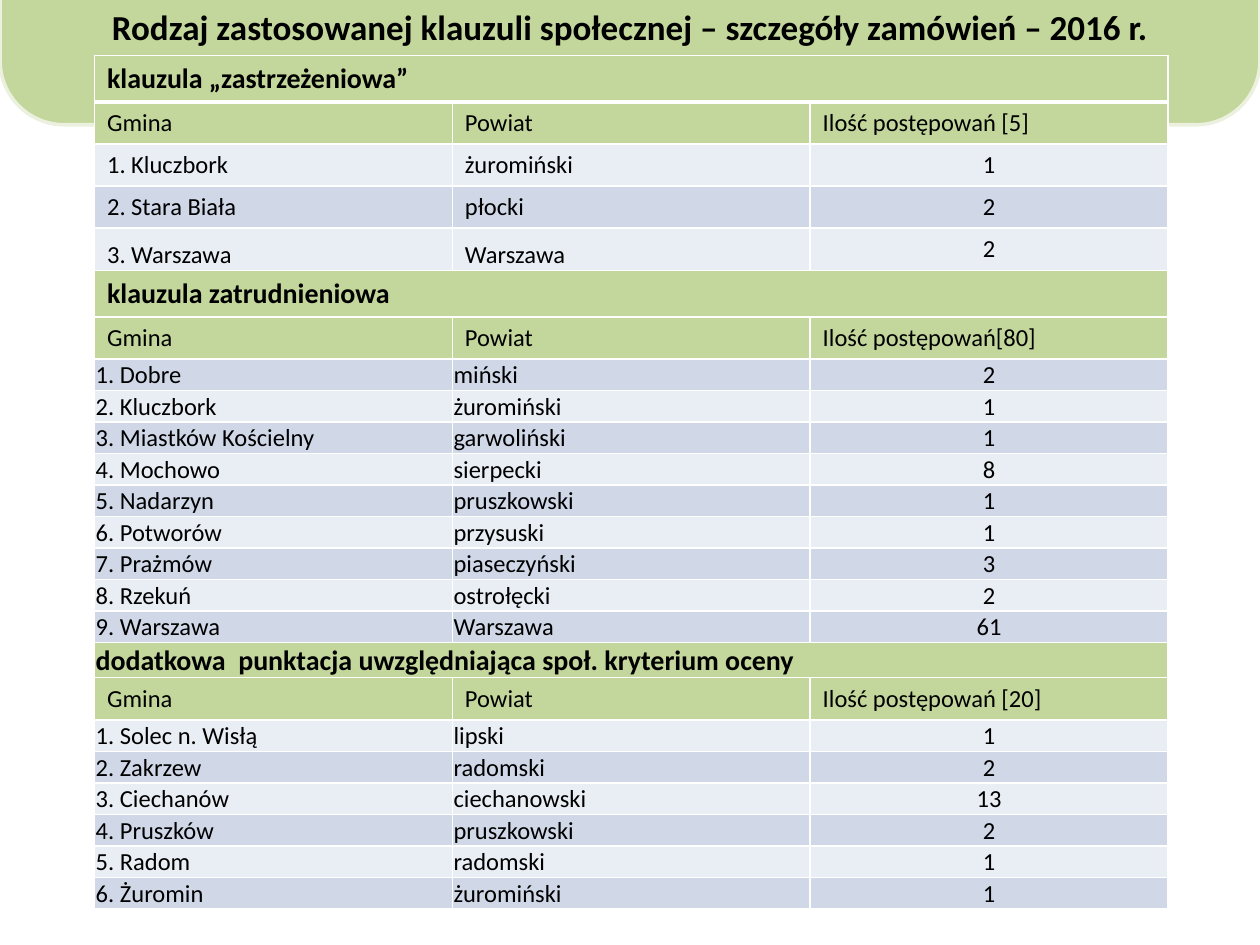
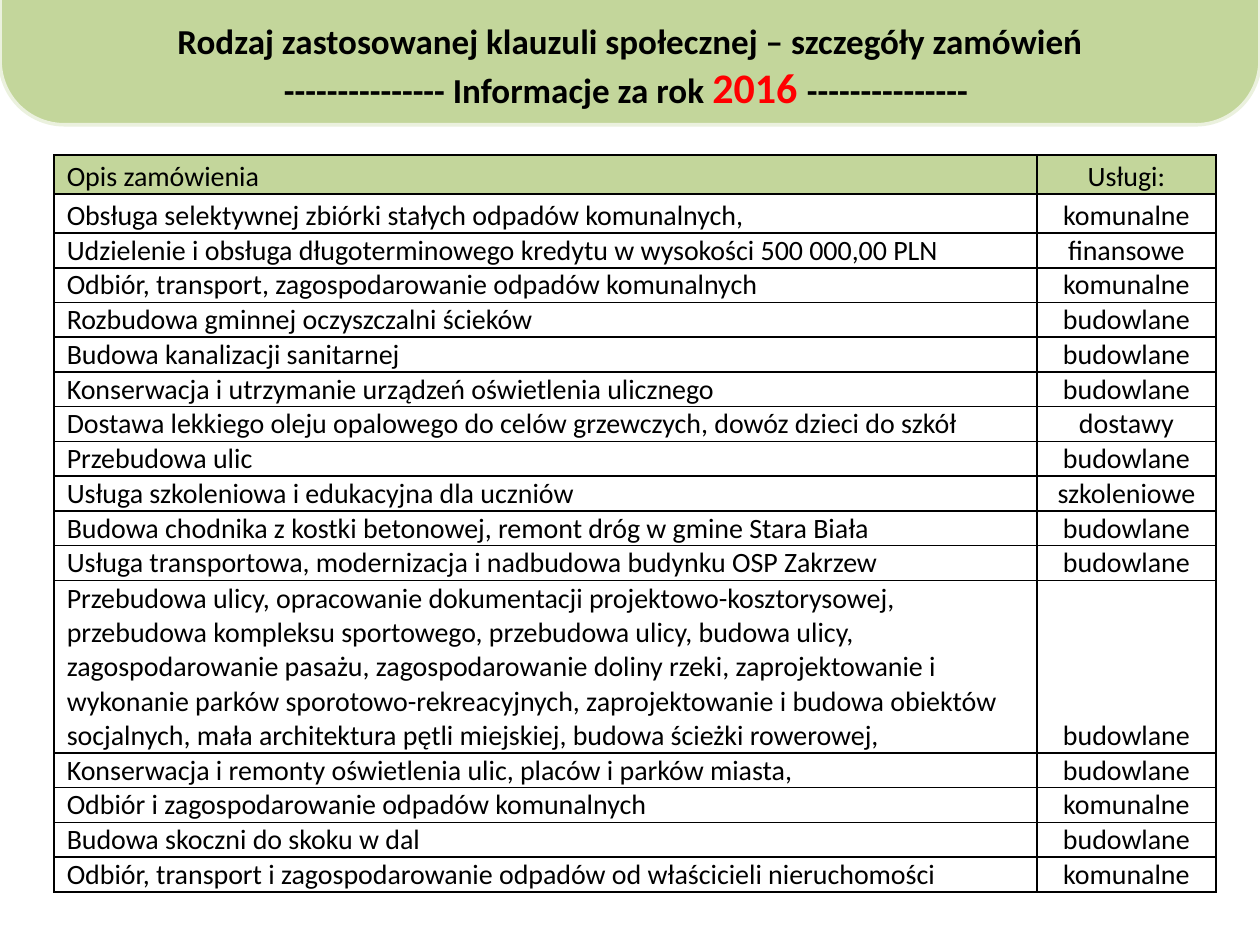
from lxml import etree
from pptx import Presentation
from pptx import util as u
from pptx.dml.color import RGBColor
from pptx.enum import shapes, text
from pptx.oxml import ns

FONT = "Calibri"
COLORS = {
    "green": "C3D69B", "pale_green": "EBF1DE", "light": "E9EDF4", "dark": "D0D8E8",
    "white": "FFFFFF", "black": "000000", "red": "FF0000",
}

# Titles: (text, size, colour) runs, "\n" is a line break
CLAUSE_TITLE = [
    ("Rodzaj zastosowanej klauzuli społecznej – szczegóły zamówień – 2016 r.\n", 20, "black"),
]
ORDER_TITLE = [
    ("Rodzaj zastosowanej klauzuli społecznej – szczegóły zamówień\n", 20, "black"),
    ("--------------- Informacje za rok ", 20, "black"),
    ("2016 ", 24, "red"),
    ("--------------- ", 20, "black"),
]

# Clauses: (heading, count heading, rows of commune, county, count)
CLAUSES = [
    ("klauzula „zastrzeżeniowa”", "Ilość postępowań [5]", [
        ("Kluczbork", "żuromiński", 1),
        ("Stara Biała", "płocki", 2),
        ("Warszawa", "Warszawa", 2),
    ]),
    ("klauzula zatrudnieniowa", "Ilość postępowań[80]", [
        ("Dobre", "miński", 2),
        ("Kluczbork", "żuromiński", 1),
        ("Miastków Kościelny", "garwoliński", 1),
        ("Mochowo", "sierpecki", 8),
        ("Nadarzyn", "pruszkowski", 1),
        ("Potworów", "przysuski", 1),
        ("Prażmów", "piaseczyński", 3),
        ("Rzekuń", "ostrołęcki", 2),
        ("Warszawa", "Warszawa", 61),
    ]),
    ("dodatkowa  punktacja uwzględniająca społ. kryterium oceny", "Ilość postępowań [20]", [
        ("Solec n. Wisłą", "lipski", 1),
        ("Zakrzew", "radomski", 2),
        ("Ciechanów", "ciechanowski", 13),
        ("Pruszków", "pruszkowski", 2),
        ("Radom", "radomski", 1),
        ("Żuromin", "żuromiński", 1),
    ]),
]

ORDERS = [
    ("Opis zamówienia", "Usługi:"),
    ("Obsługa selektywnej zbiórki stałych odpadów komunalnych,", "komunalne"),
    ("Udzielenie i obsługa długoterminowego kredytu w wysokości 500 000,00 PLN", "finansowe"),
    ("Odbiór, transport, zagospodarowanie odpadów komunalnych", "komunalne"),
    ("Rozbudowa gminnej oczyszczalni ścieków", "budowlane"),
    ("Budowa kanalizacji sanitarnej", "budowlane"),
    ("Konserwacja i utrzymanie urządzeń oświetlenia ulicznego", "budowlane"),
    ("Dostawa lekkiego oleju opalowego do celów grzewczych, dowóz dzieci do szkół", "dostawy"),
    ("Przebudowa ulic", "budowlane"),
    ("Usługa szkoleniowa i edukacyjna dla uczniów", "szkoleniowe"),
    ("Budowa chodnika z kostki betonowej, remont dróg w gmine Stara Biała", "budowlane"),
    ("Usługa transportowa, modernizacja i nadbudowa budynku OSP Zakrzew", "budowlane"),
    ("Przebudowa ulicy, opracowanie dokumentacji projektowo-kosztorysowej, przebudowa "
     "kompleksu sportowego, przebudowa ulicy, budowa ulicy, zagospodarowanie pasażu, "
     "zagospodarowanie doliny rzeki, zaprojektowanie i wykonanie parków "
     "sporotowo-rekreacyjnych, zaprojektowanie i budowa obiektów socjalnych, mała "
     "architektura pętli miejskiej, budowa ścieżki rowerowej,", "budowlane"),
    ("Konserwacja i remonty oświetlenia ulic, placów i parków miasta,", "budowlane"),
    ("Odbiór i zagospodarowanie odpadów komunalnych", "komunalne"),
    ("Budowa skoczni do skoku w dal", "budowlane"),
    ("Odbiór, transport i zagospodarowanie odpadów od właścicieli nieruchomości", "komunalne"),
]

# Cell insets: left, top, right, bottom
ROOMY = (0.1, 0.05, 0.1, 0.05)
TIGHT = (0.01, 0.01, 0.01, 0)
FLUSH = (0, 0, 0, 0)


def rgb(name):
    return RGBColor.from_string(COLORS[name])


def add_run(paragraph, content, size, color="black", bold=False):
    run = paragraph.add_run()
    run.text = content
    font = run.font
    font.name, font.size, font.bold = FONT, u.Pt(size), bold
    font.color.rgb = rgb(color)


def add_band(slide):
    band = slide.shapes.add_shape(
        shapes.MSO_SHAPE.ROUND_2_SAME_RECTANGLE,
        u.Inches(0), u.Inches(-0.03), u.Inches(10), u.Inches(1.02))
    band.adjustments[0], band.adjustments[1] = 0.5, 0
    band.rotation = 180
    band.shadow.inherit = False
    band.fill.solid()
    band.fill.fore_color.rgb = rgb("green")
    band.line.color.rgb = rgb("pale_green")
    band.line.width = u.Pt(2)


def add_title(slide, runs, top):
    box = slide.shapes.add_textbox(u.Inches(0.5), u.Inches(top), u.Inches(9), u.Inches(1.1))
    frame = box.text_frame
    frame.word_wrap = True
    frame.vertical_anchor = text.MSO_ANCHOR.MIDDLE
    paragraph = frame.paragraphs[0]
    paragraph.alignment = text.PP_ALIGN.CENTER
    for content, size, color in runs:
        add_run(paragraph, content.rstrip("\n"), size, color, bold=True)
        if content.endswith("\n"):
            paragraph.add_line_break()


def add_plain_table(slide, left, top, widths, heights):
    frame = slide.shapes.add_table(
        len(heights), len(widths), u.Inches(left), u.Inches(top),
        u.Inches(sum(widths)), u.Inches(sum(heights)))
    table = frame.table
    table.first_row = table.horz_banding = False
    for column, width in zip(table.columns, widths):
        column.width = u.Inches(width)
    for row, height in zip(table.rows, heights):
        row.height = u.Inches(height)
    return table


def set_borders(cell, color, bottom=1):
    properties = cell._tc.get_or_add_tcPr()
    for side, points in (("L", 1), ("R", 1), ("T", 1), ("B", bottom)):
        line = etree.SubElement(properties, ns.qn("a:ln" + side), w=str(u.Pt(points)))
        fill = etree.SubElement(line, ns.qn("a:solidFill"))
        etree.SubElement(fill, ns.qn("a:srgbClr"), val=COLORS[color])


def fill_cell(cell, content, size, fill=None, insets=ROOMY, indent=0, center=False, bold=False):
    cell.margin_left, cell.margin_top, cell.margin_right, cell.margin_bottom = map(u.Inches, insets)
    cell.vertical_anchor = text.MSO_ANCHOR.TOP if insets == ROOMY else text.MSO_ANCHOR.BOTTOM
    if fill:
        cell.fill.solid()
        cell.fill.fore_color.rgb = rgb(fill)
    else:
        cell.fill.background()
    paragraph = cell.text_frame.paragraphs[0]
    paragraph.alignment = text.PP_ALIGN.CENTER if center else text.PP_ALIGN.LEFT
    if indent:
        paragraph._p.get_or_add_pPr().set("marL", str(u.Inches(indent)))
    add_run(paragraph, content, size, bold=bold)


def build_clause_slide(slide):
    add_band(slide)
    add_title(slide, CLAUSE_TITLE, -0.19)

    # Row heights: heading, column names, then one per commune
    heights = []
    for number, (_, _, communes) in enumerate(CLAUSES):
        heights += [0.28 if number == 2 else 0.37, 0.33]
        heights += [0.33 if number == 0 else 0.25] * len(communes)
    table = add_plain_table(slide, 0.75, 0.44, [2.84] * 3, heights)
    for index in range(len(heights)):
        for column in range(3):
            set_borders(table.cell(index, column), "white", bottom=1 if index else 3)

    index = 0
    for number, (heading, count_heading, communes) in enumerate(CLAUSES):
        table.cell(index, 0).merge(table.cell(index, 2))
        fill_cell(table.cell(index, 0), heading, 16, "green",
                  TIGHT if number == 2 else ROOMY, bold=True)
        index += 1
        for column, name in enumerate(("Gmina", "Powiat", count_heading)):
            fill_cell(table.cell(index, column), name, 14, "green")
        for place, (commune, county, count) in enumerate(communes, 1):
            index += 1
            fill = "dark" if index % 2 else "light"
            # The last row of the first clause sits at the bottom of its cells
            lowered = number == 0 and place == len(communes)
            name_insets = TIGHT if number or lowered else ROOMY
            for column, content in enumerate((f"{place}. {commune}", county)):
                fill_cell(table.cell(index, column), content, 14, fill, name_insets,
                          indent=0.09 if lowered else 0)
            fill_cell(table.cell(index, 2), str(count), 14, fill,
                      TIGHT if number else ROOMY, center=True)
        index += 1


def build_order_slide(slide):
    add_band(slide)

    # Two taller rows, one long description, the rest share what is left
    tall, long_row, total = 0.31, 1.37, 5.85
    short = (total - 2 * tall - long_row) / (len(ORDERS) - 3)
    heights = [tall if index < 2 else long_row if len(order[0]) > 100 else short
               for index, order in enumerate(ORDERS)]
    table = add_plain_table(slide, 0.43, 1.23, [7.8, 1.42], heights)
    for index, order in enumerate(ORDERS):
        for column, content in enumerate(order):
            cell = table.cell(index, column)
            set_borders(cell, "black")
            fill_cell(cell, content, 16, None if index else "green", FLUSH,
                      indent=0 if column else 0.1, center=column == 1)
    add_title(slide, ORDER_TITLE, -0.03)


def main():
    presentation = Presentation()
    presentation.slide_width, presentation.slide_height = u.Inches(10), u.Inches(7.5)
    blank = presentation.slide_layouts[6]
    for build in (build_clause_slide, build_order_slide):
        build(presentation.slides.add_slide(blank))
    presentation.save("out.pptx")


if __name__ == "__main__":
    main()
